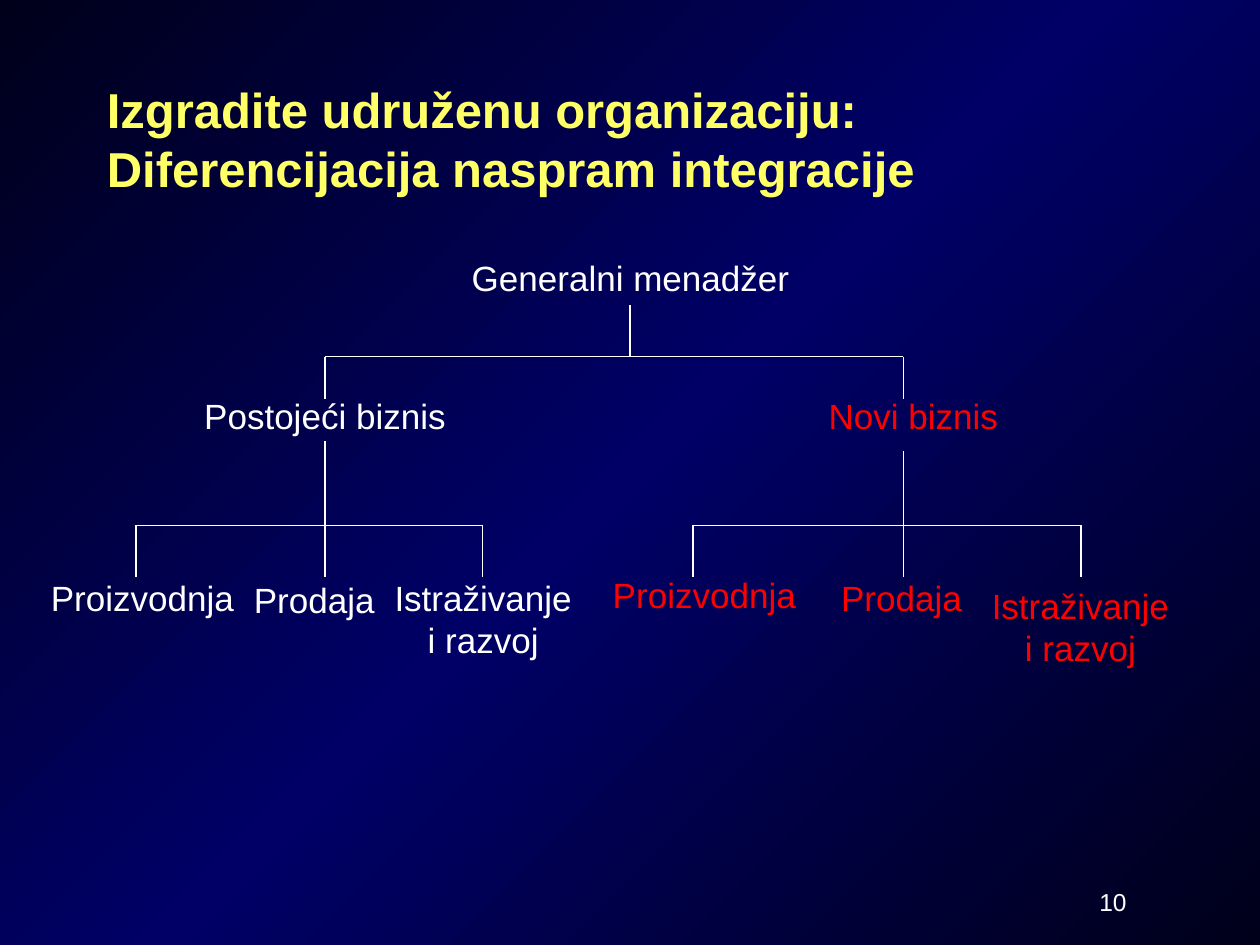
from copy import deepcopy

from pptx import Presentation
from pptx.dml.color import RGBColor
from pptx.enum.shapes import MSO_CONNECTOR as Connector
from pptx.enum.text import MSO_ANCHOR as Anchor, MSO_AUTO_SIZE as AutoSize, PP_ALIGN as Align
from pptx.oxml.ns import qn
from pptx.util import Inches, Pt
from lxml.etree import SubElement

WHITE, RED, YELLOW = "FFFFFF", "FF0000", "FFFF66"
DARK, BLUE = "00001A", "000066"
FONT = "Arial"


def color(value):
    return RGBColor.from_string(value)


def paint_background(page):
    """Diagonal gradient, brightest in the middle."""
    fill = page.background.fill
    fill.gradient()
    fill.gradient_angle = 315
    stops = page.element.find(".//" + qn("a:gsLst"))
    stops.insert(1, deepcopy(stops[0]))
    for stop, position, shade in zip(fill.gradient_stops, (0, 0.5, 1), (DARK, BLUE, DARK)):
        stop.position = position
        stop.color.rgb = color(shade)


def add_text(page, text, left, top, width, height, size=20, fill=WHITE, bold=False,
             align=Align.CENTER, anchor=Anchor.TOP, wrap=True, grow=True):
    box = page.shapes.add_textbox(Inches(left), Inches(top), Inches(width), Inches(height))
    frame = box.text_frame
    frame.word_wrap = wrap
    frame.auto_size = AutoSize.SHAPE_TO_FIT_TEXT if grow else AutoSize.NONE
    frame.vertical_anchor = anchor
    para = frame.paragraphs[0]
    para.alignment = align
    for index, line in enumerate(text.split("\n")):
        if index:
            para.add_line_break()
        span = para.add_run()
        span.text = line
        span.font.name = FONT
        span.font.size = Pt(size)
        span.font.bold = bold
        span.font.color.rgb = color(fill)


def add_line(page, x1, y1, x2, y2):
    line = page.shapes.add_connector(
        Connector.STRAIGHT, Inches(x1), Inches(y1), Inches(x2), Inches(y2))
    line.line.color.rgb = color(WHITE)
    line.line.width = Pt(0.75)
    SubElement(line._element.spPr, qn("a:effectLst"))


def add_branch(page, parent_x, top, bar, bottom, child_xs):
    """Stem from the parent, a crossbar, and a drop to each child."""
    add_line(page, parent_x, top, parent_x, bar)
    add_line(page, child_xs[0], bar, child_xs[-1], bar)
    for x in child_xs:
        add_line(page, x, bar, x, bottom)


def main():
    deck = Presentation()
    deck.slide_width, deck.slide_height = Inches(10), Inches(7.5)
    page = deck.slides.add_slide(deck.slide_layouts[6])
    paint_background(page)

    # Page number and title
    add_text(page, "10", 7.86, 6.88, 1.18, 0.55, size=14, align=Align.RIGHT,
             anchor=Anchor.MIDDLE, wrap=False, grow=False)
    add_text(page, "Izgradite udruženu organizaciju: \nDiferencijacija naspram integracije",
             0.75, 0.58, 8.71, 0.85, size=28, fill=YELLOW, bold=True,
             align=Align.LEFT, grow=False)

    # Managers
    add_text(page, "Generalni menadžer", 3.17, 1.99, 3.67, 0.44)
    add_text(page, "Postojeći biznis", 1.08, 3.08, 3, 0.44)
    add_text(page, "Novi biznis", 5.75, 3.08, 3, 0.44, fill=RED)

    # Departments: left, top and width of each label
    names = ("Proizvodnja", "Prodaja", "Istraživanje i razvoj")
    heights = (0.44, 0.44, 0.77)
    departments = {
        WHITE: ((0.17, 4.53, 1.92), (1.91, 4.54, 1.17), (3, 4.53, 1.67)),
        RED: ((4.6, 4.5, 1.98), (6.57, 4.53, 1.17), (7.74, 4.59, 1.67)),
    }
    for fill, places in departments.items():
        for name, place, height in zip(names, places, heights):
            add_text(page, name, *place, height, fill=fill)

    # Connecting lines
    add_branch(page, 5, 2.42, 2.83, 3.17, (2.58, 7.17))
    add_branch(page, 2.58, 3.5, 4.17, 4.58, (1.08, 2.58, 3.83))
    add_branch(page, 7.17, 3.58, 4.17, 4.58, (5.5, 7.17, 8.58))

    deck.save("out.pptx")


if __name__ == "__main__":
    main()
